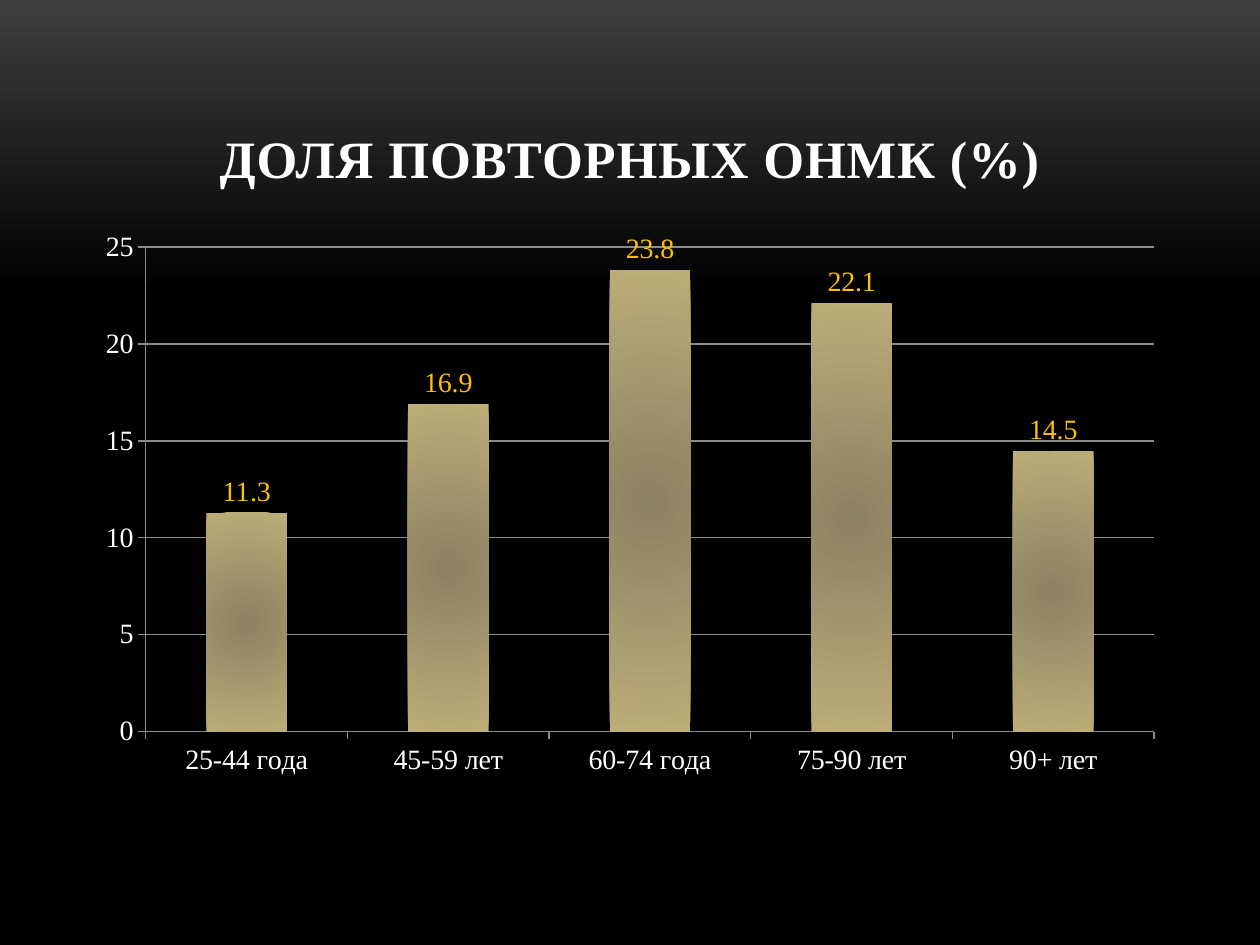
"""Build a slide with a column chart of the share of repeat strokes by age."""
from lxml import etree
from pptx import Presentation
from pptx.chart.data import CategoryChartData
from pptx.dml.color import RGBColor
from pptx.enum.chart import XL_CHART_TYPE as ChartType, XL_LABEL_POSITION as LabelPosition, XL_TICK_MARK as TickMark
from pptx.enum.text import MSO_ANCHOR as Anchor, PP_ALIGN as Align
from pptx.oxml import parse_xml
from pptx.oxml.ns import nsdecls, qn
from pptx.util import Emu, Pt

FONT = "Times New Roman"
WHITE, GRID, GOLD = "FFFFFF", "8B8B8B", "FFC000"


def px(value):
    return Emu(round(value * 914400 / 126))


def style(font, size, color, bold=False):
    font.name, font.size, font.bold = FONT, Pt(size), bold
    font.color.rgb = RGBColor.from_string(color)


presentation = Presentation()
presentation.slide_width, presentation.slide_height = px(1260), px(945)
slide = presentation.slides.add_slide(presentation.slide_layouts[5])

background = slide.background.fill
background.gradient()
background.gradient_angle = 270
for stop, position, color in zip(background.gradient_stops, (0, 0.31), ("3F3F3F", "000000")):
    stop.position = position
    stop.color.rgb = RGBColor.from_string(color)

title = slide.shapes.title
title.left, title.top, title.width, title.height = px(84), px(38), px(1092), px(157)
title.text_frame.text = "ДОЛЯ ПОВТОРНЫХ ОНМК (%)"
title.text_frame.vertical_anchor = Anchor.BOTTOM
paragraph = title.text_frame.paragraphs[0]
paragraph.alignment = Align.CENTER
run = paragraph.runs[0]
style(run.font, 30, WHITE, bold=True)
run.font._element.set("spc", "50")

data = CategoryChartData(number_format="General")
data.categories = ["25-44 года", "45-59 лет", "60-74 года", "75-90 лет", "90+ лет"]
data.add_series("Series 1", [11.3, 16.9, 23.8, 22.1, 14.5])
chart = slide.shapes.add_chart(
    ChartType.COLUMN_CLUSTERED, px(84), px(220), px(1092), px(567), data
).chart
chart.has_legend = chart.has_title = False
style(chart.font, 16, WHITE)

for axis in (chart.category_axis, chart.value_axis):
    axis.major_tick_mark = TickMark.OUTSIDE
    axis.minor_tick_mark = TickMark.NONE
    axis.format.line.color.rgb = RGBColor.from_string(GRID)
    axis.format.line.width = Pt(0.75)
value_axis = chart.value_axis
value_axis.minimum_scale, value_axis.maximum_scale, value_axis.major_unit = 0, 25, 5
value_axis.has_major_gridlines = True
value_axis.major_gridlines.format.line.color.rgb = RGBColor.from_string(GRID)
value_axis.major_gridlines.format.line.width = Pt(0.75)

plot = chart.plots[0]
plot.gap_width = 150
plot.vary_by_categories = False
series = plot.series[0]
bar_fill = series.format.fill
bar_fill.gradient()
for stop, position, color in zip(bar_fill.gradient_stops, (0, 1), ("8B8163", "BBAD77")):
    stop.position = position
    stop.color.rgb = RGBColor.from_string(color)
linear = next(series._element.iter(qn("a:lin")))
radial = parse_xml(f'<a:path {nsdecls("a")} path="circle"/>')
etree.SubElement(radial, qn("a:fillToRect"), l="50000", t="50000", r="50000", b="50000")
linear.getparent().replace(linear, radial)

labels = series.data_labels
labels.show_value = True
labels.position = LabelPosition.OUTSIDE_END
style(labels.font, 16, GOLD)

presentation.save("out.pptx")
